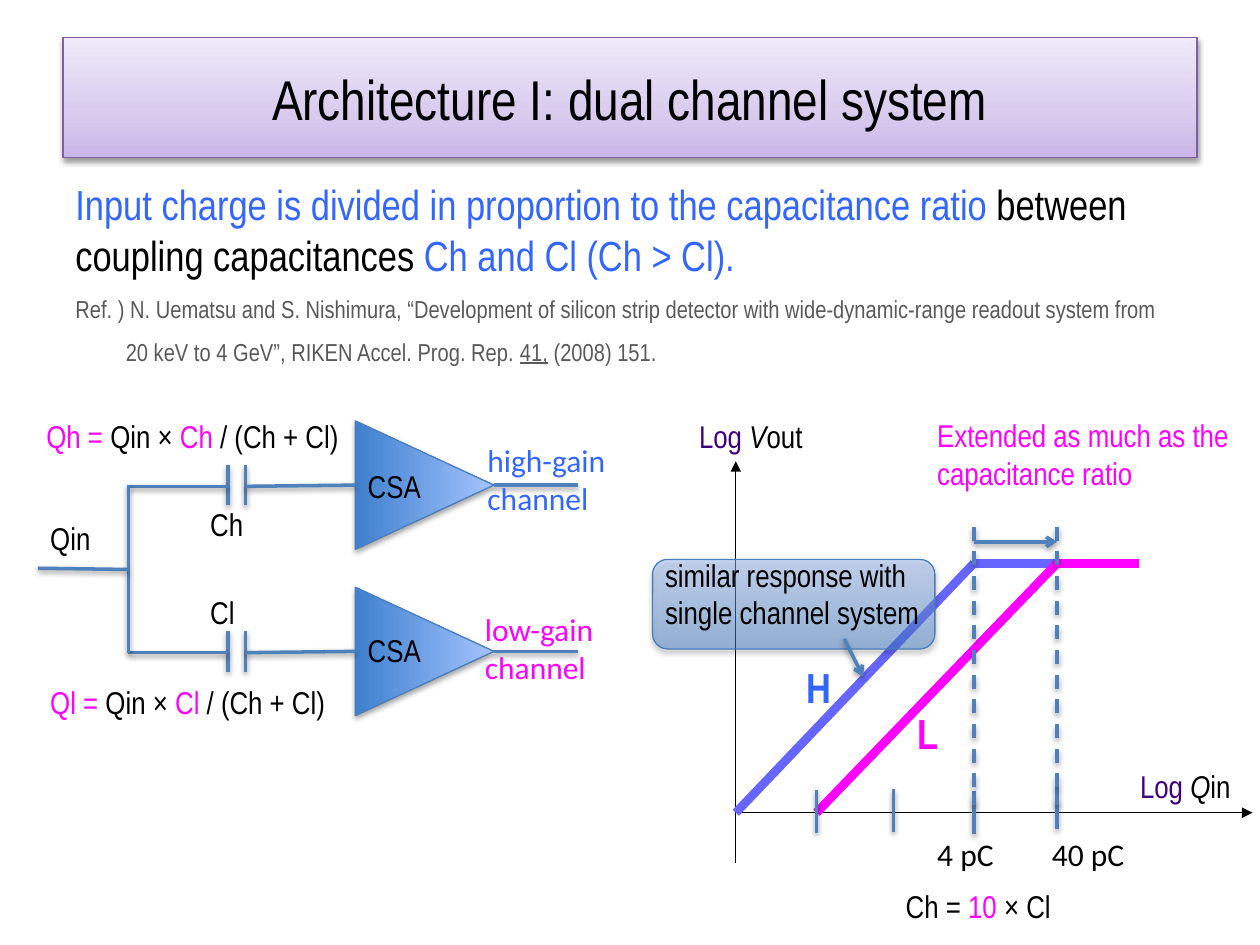
from dataclasses import dataclass
from typing import Any, Optional

import pptx
import pptx.dml.color
import pptx.enum.dml
import pptx.enum.shapes
import pptx.enum.text
import pptx.oxml
import pptx.oxml.ns
import pptx.util

EMU_PER_PX = 9144


@dataclass(frozen=True)
class Theme:
    narrow: str = "Arial Narrow"
    plain: str = "Calibri"
    title_size: int = 32
    lead_size: int = 24
    label_size: int = 18
    reference_size: int = 14
    black: str = "000000"
    grey: str = "595959"
    blue: str = "3366FF"
    magenta: str = "FF00FF"
    indigo: str = "400080"
    wire: str = "4F81BD"
    high_line: str = "6666FF"
    edge: str = "4B7EBC"
    title_edge: str = "7D60A0"
    title_stops: tuple = ((0, "C9B5E8"), (35, "D8CBEE"), (100, "F0EAF9"))
    blue_stops: tuple = ((0, "3F80CE"), (100, "A4C4FF"))


THEME = Theme()


@dataclass(frozen=True)
class Span:
    text: str
    color: str = THEME.black
    italic: bool = False
    bold: bool = False
    underline: bool = False


@dataclass(frozen=True)
class Label:
    box: tuple[int, int, int, int]
    lines: tuple[tuple[Span, ...], ...]
    font: str = THEME.narrow
    size: int = THEME.label_size


@dataclass(frozen=True)
class Line:
    start: tuple[int, int]
    end: tuple[int, int]
    color: str = THEME.wire
    width: float = 2
    shadow: bool = True
    dashed: bool = False
    head: Optional[str] = None
    tail: Optional[str] = None


def px(value: int) -> pptx.util.Emu:
    return pptx.util.Emu(value * EMU_PER_PX)


def rgb(color: str) -> pptx.dml.color.RGBColor:
    return pptx.dml.color.RGBColor.from_string(color)


def add_xml(parent: Any, xml: str) -> None:
    namespace = pptx.oxml.ns.nsdecls("a")
    parent.append(pptx.oxml.parse_xml(xml.replace(">", f" {namespace}>", 1)))


def set_shadow(shape: Any, opacity: int, distance: int) -> None:
    add_xml(shape._element.spPr, '<a:effectLst><a:outerShdw blurRad="40000" '
            f'dist="{distance}" dir="5400000" rotWithShape="0"><a:srgbClr val="000000">'
            f'<a:alpha val="{opacity * 1000}"/></a:srgbClr></a:outerShdw></a:effectLst>')


def set_gradient(shape: Any, stops: tuple, edge: str, opacity: int = 100) -> None:
    shape.fill.gradient()
    shape.fill.gradient_angle = 90
    stop_list = shape._element.spPr.find(".//" + pptx.oxml.ns.qn("a:gsLst"))
    for stop in list(stop_list):
        stop_list.remove(stop)
    for position, color in stops:
        add_xml(stop_list, f'<a:gs pos="{position * 1000}"><a:srgbClr val="{color}">'
                f'<a:alpha val="{opacity * 1000}"/></a:srgbClr></a:gs>')
    shape.line.color.rgb = rgb(edge)
    shape.line.width = pptx.util.Pt(0.75)


def draw_line(shapes: Any, line: Line) -> None:
    connector = shapes.add_connector(
        pptx.enum.shapes.MSO_CONNECTOR.STRAIGHT, *map(px, line.start + line.end))
    connector.line.color.rgb = rgb(line.color)
    connector.line.width = pptx.util.Pt(line.width)
    if line.dashed:
        connector.line.dash_style = pptx.enum.dml.MSO_LINE.DASH
    for tag, kind in (("headEnd", line.head), ("tailEnd", line.tail)):
        if kind:
            add_xml(connector.line._get_or_add_ln(), f'<a:{tag} type="{kind}"></a:{tag}>')
    if line.shadow:
        set_shadow(connector, 38, 20000)
    else:
        add_xml(connector._element.spPr, "<a:effectLst></a:effectLst>")


def add_spans(paragraph: Any, spans: tuple[Span, ...], font: str, size: int) -> None:
    for span in spans:
        run = paragraph.add_run()
        run.text = span.text
        run.font.name = font
        run.font.size = pptx.util.Pt(size)
        run.font.color.rgb = rgb(span.color)
        run.font.italic = span.italic
        run.font.bold = span.bold
        run.font.underline = span.underline


def draw_label(shapes: Any, label: Label) -> None:
    text_frame = shapes.add_textbox(*map(px, label.box)).text_frame
    text_frame.word_wrap = False
    text_frame.auto_size = pptx.enum.text.MSO_AUTO_SIZE.SHAPE_TO_FIT_TEXT
    for index, spans in enumerate(label.lines):
        paragraph = text_frame.add_paragraph() if index else text_frame.paragraphs[0]
        add_spans(paragraph, spans, label.font, label.size)


def draw_title(slide: Any) -> None:
    title = slide.shapes.title
    title.left, title.top, title.width, title.height = map(px, (50, 30, 900, 95))
    set_gradient(title, THEME.title_stops, THEME.title_edge)
    set_shadow(title, 38, 20000)
    title.text_frame.vertical_anchor = pptx.enum.text.MSO_ANCHOR.MIDDLE
    paragraph = title.text_frame.paragraphs[0]
    paragraph.alignment = pptx.enum.text.PP_ALIGN.CENTER
    add_spans(paragraph, (Span("Architecture I: dual channel system"),),
              THEME.narrow, THEME.title_size)


def draw_introduction(shapes: Any) -> None:
    text_frame = shapes.add_textbox(*map(px, (50, 137, 900, 162))).text_frame
    text_frame.word_wrap = True
    lead = text_frame.paragraphs[0]
    add_spans(lead, (
        Span("Input charge is divided in proportion to the capacitance ratio ", THEME.blue),
        Span("between coupling capacitances "),
        Span("Ch and Cl (Ch > Cl).", THEME.blue)), THEME.narrow, THEME.lead_size)
    references = (
        (0, (Span("Ref. ) N. Uematsu and S. Nishimura, “Development of silicon strip detector "
                  "with wide-dynamic-range readout system from", THEME.grey),)),
        (40, (Span("20 keV to 4 GeV”, RIKEN Accel. Prog. Rep. ", THEME.grey),
              Span("41,", THEME.grey, underline=True), Span(" (2008) 151.", THEME.grey))))
    for indent, spans in references:
        paragraph = text_frame.add_paragraph()
        paragraph.space_before = pptx.util.Pt(8)
        paragraph._p.get_or_add_pPr().set("marL", str(px(indent)))
        add_spans(paragraph, spans, THEME.narrow, THEME.reference_size)


def draw_channel(shapes: Any, axis: int, amplifier_text_top: int) -> None:
    amplifier = shapes.add_shape(pptx.enum.shapes.MSO_SHAPE.ISOSCELES_TRIANGLE,
                                 *map(px, (286, axis - 55, 102, 110)))
    amplifier.rotation = 90
    set_gradient(amplifier, THEME.blue_stops, THEME.edge)
    set_shadow(amplifier, 35, 23000)
    capacitor = shapes.add_group_shape()
    for x in (195, 181):
        draw_line(capacitor.shapes, Line((x, axis - 16), (x, axis + 16)))
    for start, end in (((282, axis), (195, axis + 1)), ((181, axis + 1), (102, axis + 1)),
                       ((392, axis), (459, axis))):
        draw_line(shapes, Line(start, end))
    draw_label(shapes, Label((282, amplifier_text_top, 63, 40), ((Span("CSA"),),)))


def draw_circuit(shapes: Any) -> None:
    draw_channel(shapes, 385, 366)
    draw_channel(shapes, 517, 496)
    draw_line(shapes, Line((102, 385), (102, 518)))
    draw_line(shapes, Line((102, 452), (30, 451)))
    pink, blue = THEME.magenta, THEME.blue
    for label in (
        Label((30, 407, 52, 40), ((Span("Qin"),),)),
        Label((157, 396, 47, 40), ((Span("Ch"),),)),
        Label((157, 466, 39, 40), ((Span("Cl"),),)),
        Label((27, 326, 254, 40), ((Span("Qh =", pink), Span(" Qin × "),
                                    Span("Ch ", pink), Span("/ (Ch + Cl)")),)),
        Label((30, 537, 241, 40), ((Span("Ql =", pink), Span(" Qin × "),
                                    Span("Cl", pink), Span(" / (Ch + Cl)")),)),
        Label((377, 345, 115, 71), ((Span("high-gain", blue),), (Span("channel", blue),)),
              THEME.plain),
        Label((375, 479, 107, 71), ((Span("low-gain", pink),), (Span("channel", pink),)),
              THEME.plain),
    ):
        draw_label(shapes, label)


def draw_graph(shapes: Any) -> None:
    origin, baseline, plateau, high_knee, low_knee = 584, 645, 447, 773, 839
    pink, indigo = THEME.magenta, THEME.indigo
    draw_line(shapes, Line((origin, baseline), (994, baseline), THEME.black, 0.75, False,
                           tail="triangle"))
    draw_line(shapes, Line((origin, 366), (origin, 685), THEME.black, 0.75, False,
                           head="triangle"))
    for color, foot, knee, finish in ((THEME.high_line, origin, high_knee, low_knee),
                                      (pink, 648, low_knee, 904)):
        draw_line(shapes, Line((foot, baseline), (knee, plateau), color, 5, False))
        draw_line(shapes, Line((knee, plateau), (finish, plateau), color, 5, False))
    for x, top in ((648, 627), (709, 626), (high_knee, 628), (low_knee, 624)):
        draw_line(shapes, Line((x, top), (x, top + 34)))
    for x in (low_knee, high_knee):
        draw_line(shapes, Line((x, 418), (x, 639), dashed=True))
    draw_line(shapes, Line((high_knee, 430), (low_knee, 430), tail="arrow"))
    callout = shapes.add_shape(pptx.enum.shapes.MSO_SHAPE.ROUNDED_RECTANGLE,
                               *map(px, (518, 444, 224, 71)))
    set_gradient(callout, THEME.blue_stops, THEME.edge, 46)
    set_shadow(callout, 35, 23000)
    for label in (
        Label((895, 604, 93, 40), ((Span("Log ", indigo), Span("Q", italic=True), Span("in")),)),
        Label((545, 326, 103, 40), ((Span("Log ", indigo), Span("V", italic=True), Span("out")),)),
        Label((734, 658, 66, 40), ((Span("4 pC"),),), THEME.plain),
        Label((825, 658, 79, 40), ((Span("40 pC"),),), THEME.plain),
        Label((734, 325, 254, 71), ((Span("Extended as much as the", pink),),
                                    (Span("capacitance ratio", pink),))),
        Label((709, 699, 140, 40), ((Span("Ch = "), Span("10 ", pink), Span("× Cl")),)),
        Label((630, 520, 40, 50), ((Span("H", THEME.blue, bold=True),),), size=THEME.lead_size),
        Label((718, 557, 37, 50), ((Span("L", pink, bold=True),),), size=THEME.lead_size),
        Label((518, 436, 224, 71), ((Span("similar response with"),),
                                    (Span("single channel system"),))),
    ):
        draw_label(shapes, label)
    draw_line(shapes, Line((670, 507), (685, 537), tail="arrow"))


def main() -> None:
    presentation = pptx.Presentation()
    presentation.slide_width, presentation.slide_height = px(1000), px(750)
    slide = presentation.slides.add_slide(presentation.slide_layouts[5])
    draw_title(slide)
    draw_introduction(slide.shapes)
    draw_circuit(slide.shapes)
    draw_graph(slide.shapes)
    presentation.save("out.pptx")


if __name__ == "__main__":
    main()
